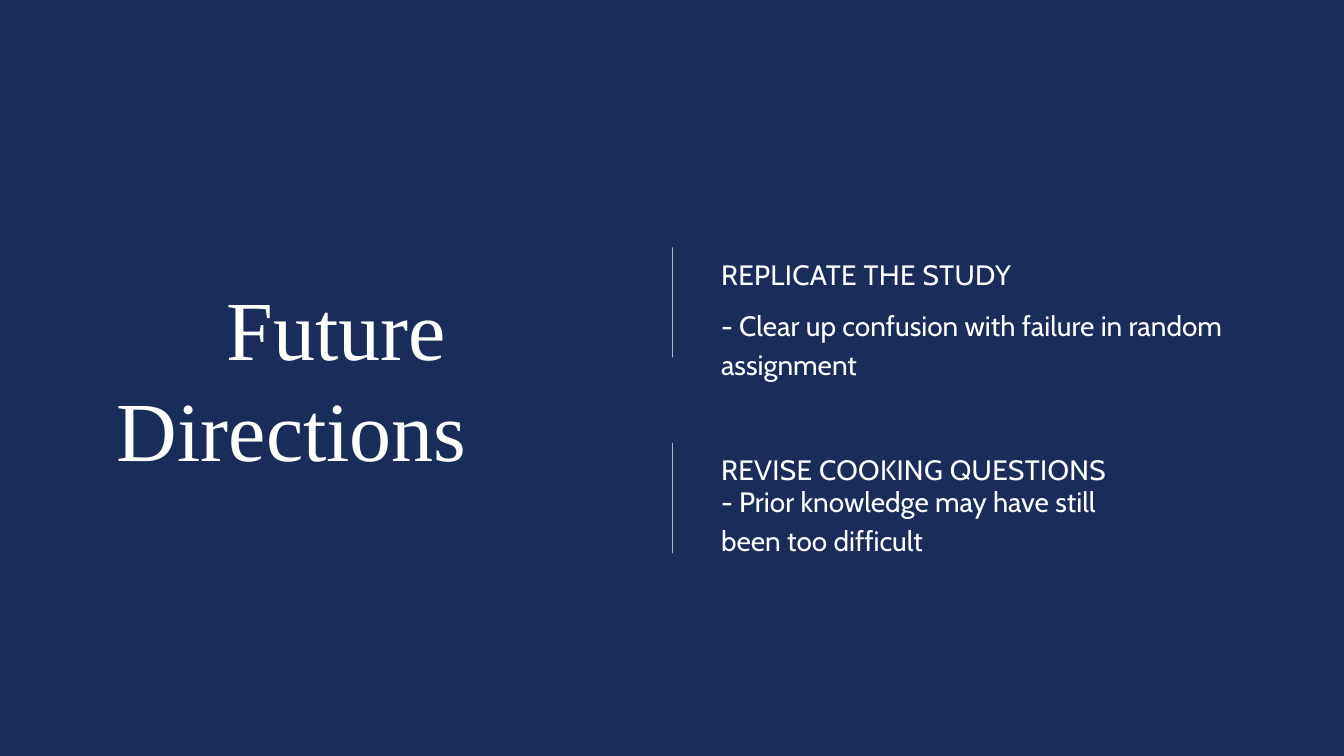
from dataclasses import dataclass

from pptx import Presentation
from pptx.dml.color import RGBColor
from pptx.enum.shapes import MSO_SHAPE
from pptx.enum.text import MSO_ANCHOR, MSO_AUTO_SIZE, PP_ALIGN
from pptx.oxml.xmlchemy import OxmlElement
from pptx.util import Inches, Pt


@dataclass(frozen=True)
class Theme:
    navy: RGBColor = RGBColor(0x1A, 0x2C, 0x5A)
    white: RGBColor = RGBColor(0xFF, 0xFF, 0xFF)
    title_font: str = "Times New Roman"
    body_font: str = "Cabin"
    title_size: int = 90
    title_leading: int = 108
    body_size: int = 30
    body_leading: int = 42


@dataclass(frozen=True)
class Direction:
    heading: str
    details: list[str]
    bar_top: float
    heading_top: float
    detail_top: float


THEME = Theme()
BAR_LEFT, BAR_WIDTH, BAR_HEIGHT = 10, 0.01, 1.64
TEXT_LEFT, TEXT_WIDTH = 10.73, 7.58
HEADING_HEIGHT, DETAIL_HEIGHT = 0.54, 1.12

DIRECTIONS = [
    Direction("REPLICATE THE STUDY",
              ["- Clear up confusion with failure in random assignment"],
              3.68, 3.75, 4.51),
    Direction("REVISE COOKING QUESTIONS",
              ["- Prior knowledge may have still", "been too difficult"],
              6.59, 6.65, 7.12),
]


def write(sp, box: tuple[float, ...], lines: list[str], *,
          font: str = THEME.body_font, size: int = THEME.body_size,
          leading: int = THEME.body_leading, spacing: int = 0,
          aligns: tuple = ()) -> None:
    sp.left, sp.top, sp.width, sp.height = map(Inches, box)
    tf = sp.text_frame
    tf.margin_left = tf.margin_top = tf.margin_right = tf.margin_bottom = 0
    tf.word_wrap = True
    tf.auto_size = MSO_AUTO_SIZE.NONE
    tf.vertical_anchor = MSO_ANCHOR.TOP
    for i, line in enumerate(lines):
        p = tf.add_paragraph() if i else tf.paragraphs[0]
        p.alignment = aligns[i] if aligns else PP_ALIGN.LEFT
        p.line_spacing = Pt(leading)
        p.space_before = p.space_after = Pt(0)
        pPr = p._p.get_or_add_pPr()
        pPr.set("marL", "0")
        pPr.set("indent", "0")
        pPr.append(OxmlElement("a:buNone"))
        r = p.add_run()
        r.text = line
        r.font.name = font
        r.font.size = Pt(size)
        r.font.bold = False
        r.font.color.rgb = THEME.white
        if spacing:
            r._r.get_or_add_rPr().set("spc", str(spacing))


def add_bar(s, top: float) -> None:
    sp = s.shapes.add_shape(MSO_SHAPE.RECTANGLE, Inches(BAR_LEFT), Inches(top),
                            Inches(BAR_WIDTH), Inches(BAR_HEIGHT))
    sp.shadow.inherit = False
    sp.fill.solid()
    sp.fill.fore_color.rgb = THEME.white
    sp.line.fill.background()


def add_direction(s, d: Direction, heading_sp, detail_sp) -> None:
    add_bar(s, d.bar_top)
    write(heading_sp, (TEXT_LEFT, d.heading_top, TEXT_WIDTH, HEADING_HEIGHT),
          [d.heading], spacing=40)
    write(detail_sp, (TEXT_LEFT, d.detail_top, TEXT_WIDTH, DETAIL_HEIGHT),
          d.details)


def main() -> None:
    prs = Presentation()
    prs.slide_width, prs.slide_height = Inches(20), Inches(11.25)
    s = prs.slides.add_slide(prs.slide_layouts.get_by_name("Comparison"))
    s.background.fill.solid()
    s.background.fill.fore_color.rgb = THEME.navy

    write(s.shapes.title, (1.74, 4.12, 6.84, 3), ["Future ", "Directions"],
          font=THEME.title_font, size=THEME.title_size,
          leading=THEME.title_leading,
          aligns=(PP_ALIGN.CENTER, PP_ALIGN.LEFT))

    bodies = list(s.placeholders)[1:5]
    for d, heading_sp, detail_sp in zip(DIRECTIONS, bodies[::2], bodies[1::2]):
        add_direction(s, d, heading_sp, detail_sp)

    prs.save("out.pptx")


if __name__ == "__main__":
    main()
